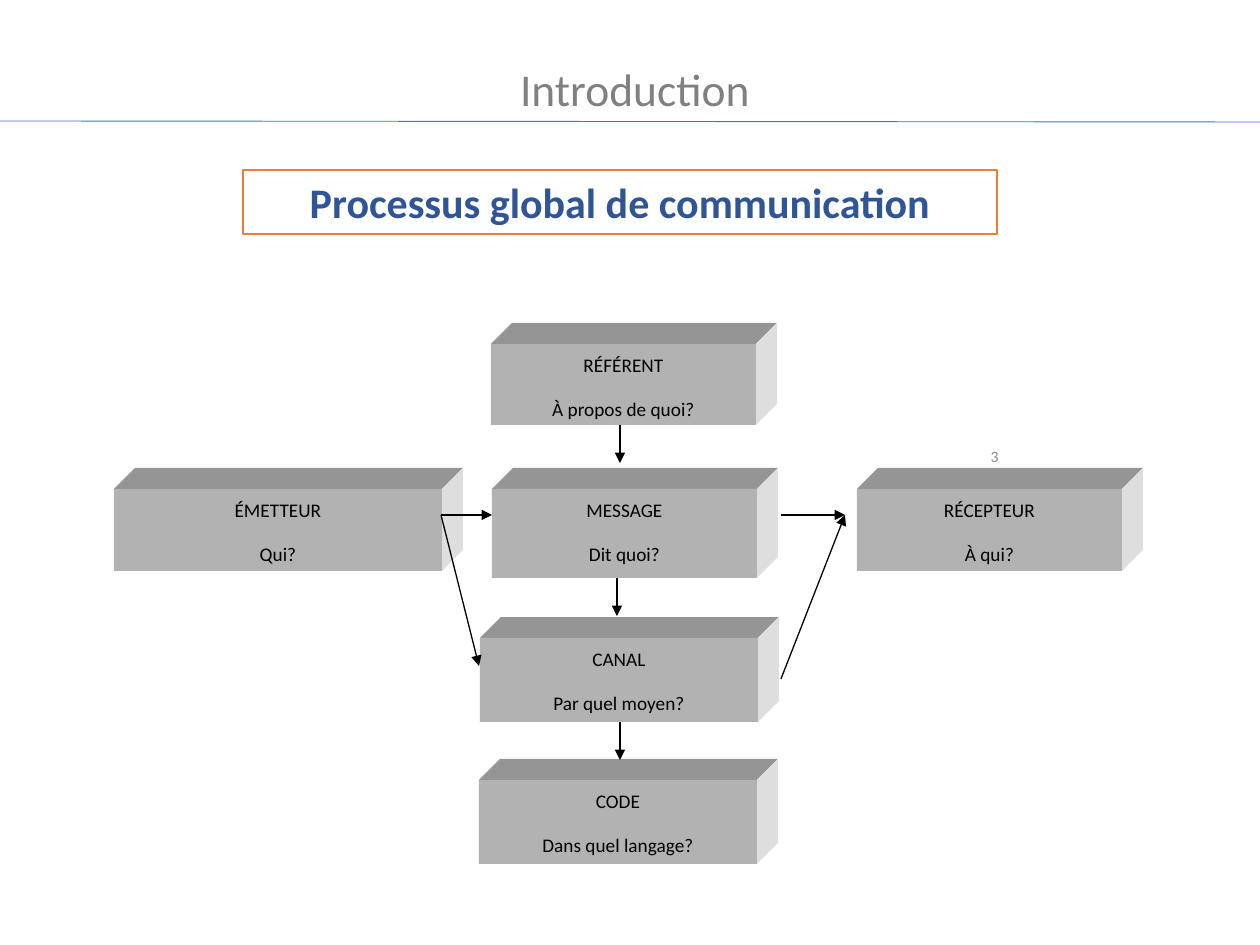
from pptx import Presentation
from pptx.dml.color import RGBColor
from pptx.enum.shapes import MSO_CONNECTOR as CONN, MSO_SHAPE as SHAPE
from pptx.enum.text import MSO_ANCHOR as ANCHOR, MSO_AUTO_SIZE as AUTO, PP_ALIGN as ALIGN
from pptx.oxml.ns import qn
from pptx.util import Pt
from lxml.etree import SubElement


def px(n):
    """Turn pixels into EMU."""
    return round(n * 914400 / 126)


def rgb(value):
    """Turn a hex string into a colour."""
    return RGBColor.from_string(value)


def write(tf, text, size=11, color="000000", bold=False, align=ALIGN.CENTER,
          anchor=ANCHOR.TOP, spacing=None, after=None):
    """Fill a text frame, one paragraph per line of text."""
    tf.word_wrap = True
    tf.auto_size = AUTO.NONE
    tf.vertical_anchor = anchor
    for i, line in enumerate(text.split("\n")):
        p = tf.add_paragraph() if i else tf.paragraphs[0]
        p.alignment = align
        p.line_spacing = spacing
        p.space_before = Pt(0)
        p.space_after = after
        r = p.add_run()
        r.text = line
        r.font.name = "Calibri"
        r.font.size = Pt(size)
        r.font.bold = bold
        r.font.color.rgb = rgb(color)


class Deck:
    """Hold the style and the current slide."""

    front, top, side = "B2B2B2", "959595", "DEDEDE"
    depth = 21

    def __init__(self):
        """Open a presentation with one title-only slide."""
        self.prs = Presentation()
        self.prs.slide_width, self.prs.slide_height = px(1260), px(945)
        self.s = self.prs.slides.add_slide(self.prs.slide_layouts[5])

    def title(self, text, x, y, w, h):
        """Place and fill the title."""
        sp = self.s.shapes.title
        sp.left, sp.top, sp.width, sp.height = map(px, (x, y, w, h))
        write(sp.text_frame, text, size=26, color="808080")

    def label(self, text, x, y, w, h, **fmt):
        """Add a text box."""
        sp = self.s.shapes.add_textbox(*map(px, (x, y, w, h)))
        write(sp.text_frame, text, **fmt)

    def paint(self, sp, fill, line=None):
        """Give a shape a flat fill and an optional outline."""
        sp.shadow.inherit = False
        sp.fill.solid()
        sp.fill.fore_color.rgb = rgb(fill)
        if line:
            sp.line.color.rgb = rgb(line)
            sp.line.width = Pt(1)
        else:
            sp.line.fill.background()

    def rect(self, text, x, y, w, h, fill, line=None, **fmt):
        """Add a rectangle with text."""
        sp = self.s.shapes.add_shape(SHAPE.RECTANGLE, *map(px, (x, y, w, h)))
        self.paint(sp, fill, line)
        write(sp.text_frame, text, **fmt)

    def face(self, points, fill):
        """Add a slanted face of a block."""
        start, *rest = [(px(x), px(y)) for x, y in points]
        fb = self.s.shapes.build_freeform(*start)
        fb.add_line_segments(rest, close=True)
        self.paint(fb.convert_to_shape(), fill)

    def block(self, text, x, y, w, h):
        """Add a raised block with its top and right faces."""
        d, right, bottom = self.depth, x + w, y + h
        self.face([(x, y), (x + d, y - d), (right + d, y - d), (right, y)], self.top)
        self.face([(right, y), (right + d, y - d), (right + d, bottom - d),
                   (right, bottom)], self.side)
        self.rect(text, x, y, w, h, self.front, spacing=1.15, after=Pt(10))

    def line(self, x1, y1, x2, y2, color="000000", width=0.75, arrow=True):
        """Add a straight line, with an arrowhead at its end if asked."""
        c = self.s.shapes.add_connector(CONN.STRAIGHT, *map(px, (x1, y1, x2, y2)))
        c.line.color.rgb = rgb(color)
        c.line.width = Pt(width)
        if arrow:
            SubElement(c.line._get_or_add_ln(), qn("a:tailEnd"), type="triangle")
        SubElement(c._element.spPr, qn("a:effectLst"))


BLOCKS = [
    ("RÉFÉRENT\nÀ propos de quoi?", 491, 344, 265, 81),
    ("MESSAGE\nDit quoi?", 492, 489, 265, 89),
    ("CANAL\nPar quel moyen?", 480, 638, 278, 84),
    ("CODE\nDans quel langage?", 479, 780, 278, 84),
    ("RÉCEPTEUR\nÀ qui?", 857, 489, 265, 82),
    ("ÉMETTEUR\nQui?", 114, 489, 328, 82),
]
ARROWS = [
    (781, 679, 845, 515),
    (620, 425, 620, 463),
    (617, 578, 617, 616),
    (620, 722, 620, 760),
    (441, 515, 492, 515),
    (441, 515, 479, 666),
    (781, 515, 845, 515),
]


def main():
    """Build the slide."""
    deck = Deck()
    deck.title("Introduction", 10, 55, 1250, 68)
    deck.line(0, 121, 1260, 122, color="4472C4", width=0.5, arrow=False)
    deck.rect("Processus global de communication", 243, 170, 754, 64, "FFFFFF",
              line="ED7D31", size=24, color="2F5597", bold=True)
    deck.label("3", 727, 431, 284, 50, size=9, color="8C8C8C",
               align=ALIGN.RIGHT, anchor=ANCHOR.MIDDLE)
    for block in BLOCKS:
        deck.block(*block)
    for arrow in ARROWS:
        deck.line(*arrow)
    deck.prs.save("out.pptx")


if __name__ == "__main__":
    main()
